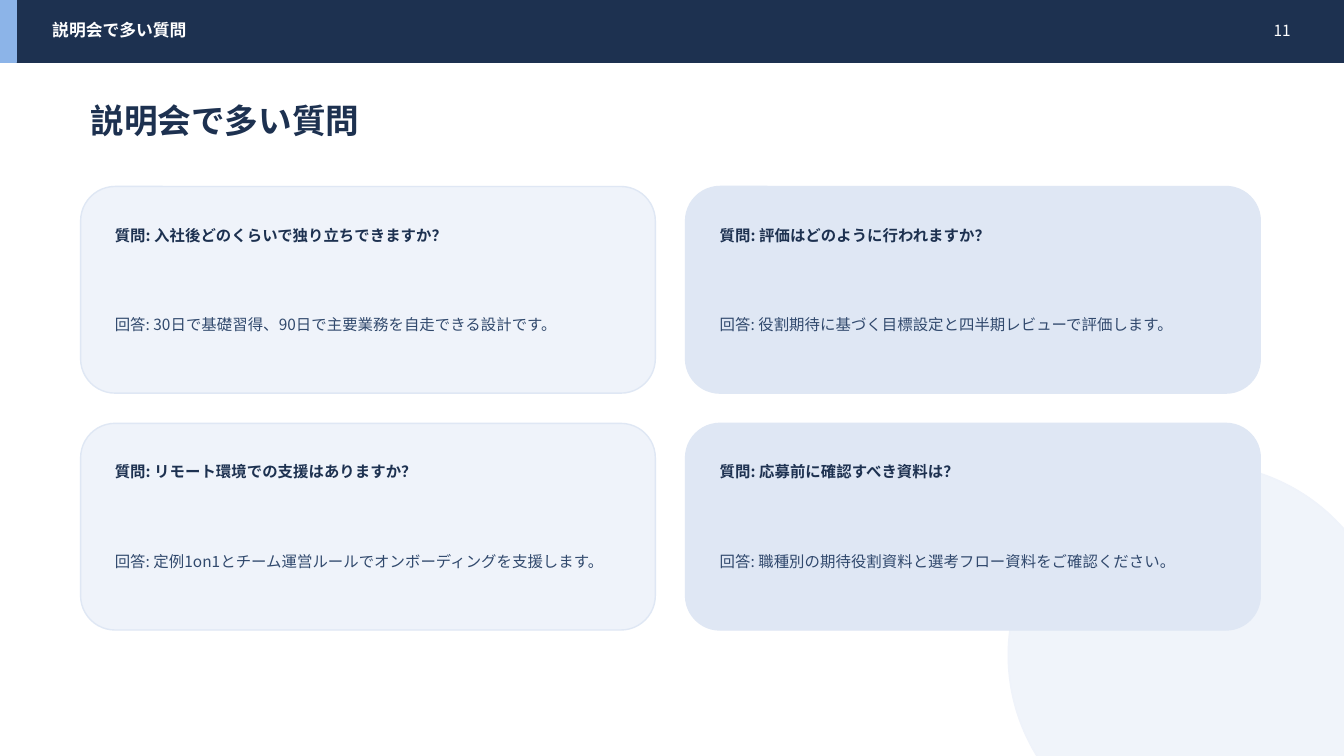
from lxml.etree import SubElement
from pptx import Presentation
from pptx.dml.color import RGBColor
from pptx.enum.shapes import MSO_SHAPE
from pptx.enum.text import MSO_ANCHOR, PP_ALIGN
from pptx.oxml.ns import qn
from pptx.util import Inches, Pt

WIDTH, HEIGHT = 13.33, 7.5
NAVY, SLATE, SKY, WHITE = "1D3150", "31496D", "8CB4E8", "FFFFFF"
PALE, MIST = "EFF3FA", "DFE7F4"
SANS, SERIF = "Noto Sans CJK JP", "Times New Roman"
TITLE = "説明会で多い質問"
ITEMS = [
    ("入社後どのくらいで独り立ちできますか？",
     "30日で基礎習得、90日で主要業務を自走できる設計です。"),
    ("評価はどのように行われますか？",
     "役割期待に基づく目標設定と四半期レビューで評価します。"),
    ("リモート環境での支援はありますか？",
     "定例1on1とチーム運営ルールでオンボーディングを支援します。"),
    ("応募前に確認すべき資料は？",
     "職種別の期待役割資料と選考フロー資料をご確認ください。"),
]


def color(code):
    """Turn a hex string into a colour."""
    return RGBColor.from_string(code)


def shape(slide, kind, box, fill, line=None):
    """Draw a filled preset shape with a thin outline."""
    item = slide.shapes.add_shape(kind, *map(Inches, box))
    item.shadow.inherit = False
    item.fill.solid()
    item.fill.fore_color.rgb = color(fill)
    item.line.color.rgb = color(line or fill)
    item.line.width = Pt(1)
    return item


def label(slide, box, text, size, ink, bold=False, face=SANS, align=PP_ALIGN.LEFT):
    """Write one line of text, centred in height."""
    frame = slide.shapes.add_textbox(*map(Inches, box)).text_frame
    frame.word_wrap = True
    frame.vertical_anchor = MSO_ANCHOR.MIDDLE
    para = frame.paragraphs[0]
    para.text = text
    para.alignment = align
    font = para.font
    font.name, font.size, font.bold = face, Pt(size), bold
    font.color.rgb = color(ink)


def backdrop(slide, left, top, size):
    """Draw the translucent circle in the corner."""
    disc = shape(slide, MSO_SHAPE.OVAL, (left, top, size, size), PALE)
    tint = disc.fill._xPr.find(qn("a:solidFill"))[0]
    SubElement(tint, qn("a:alpha")).set("val", "88000")


def header(slide, left, top, width, height):
    """Draw the top band with its accent, name and page number."""
    shape(slide, MSO_SHAPE.RECTANGLE, (left, top, width, height), NAVY)
    shape(slide, MSO_SHAPE.RECTANGLE, (left, top, 0.16, height), SKY)
    row, tall = top + 0.17, 0.26
    label(slide, (left + 0.42, row, 8.8, tall), TITLE, 12, WHITE, bold=True)
    label(slide, (left + width - 1.18, row, 0.75, tall), "11", 11, WHITE,
          align=PP_ALIGN.RIGHT)


def card(slide, left, top, width, height, fill, item):
    """Draw one question with its answer on a rounded card."""
    ask, reply = item
    pad = 0.24
    shape(slide, MSO_SHAPE.ROUNDED_RECTANGLE, (left, top, width, height), fill, MIST)
    label(slide, (left + pad, top + pad, width - 0.5, 0.48),
          f"質問: {ask}", 11, NAVY, bold=True)
    label(slide, (left + pad, top + 0.82, width - 0.5, 1.1),
          f"回答: {reply}", 11, SLATE)


def cards(slide, left, top, width, height, gap):
    """Lay the questions out in two columns and two rows."""
    wide, tall = (width - gap) / 2, (height - gap) / 2
    for index, item in enumerate(ITEMS):
        row, col = divmod(index, 2)
        card(slide, left + col * (wide + gap), top + row * (tall + gap),
             wide, tall, (PALE, MIST)[col], item)


def main():
    """Build the slide and save it."""
    deck = Presentation()
    deck.slide_width, deck.slide_height = Inches(WIDTH), Inches(HEIGHT)
    slide = deck.slides.add_slide(deck.slide_layouts[6])
    backdrop(slide, 10, 4.6, 3.8)
    header(slide, 0, 0, WIDTH, 0.62)
    label(slide, (0.8, 0.95, 11.4, 0.48), TITLE, 24, NAVY, bold=True, face=SERIF)
    cards(slide, 0.8, 1.85, 11.7, 4.4, 0.3)
    deck.save("out.pptx")


if __name__ == "__main__":
    main()
